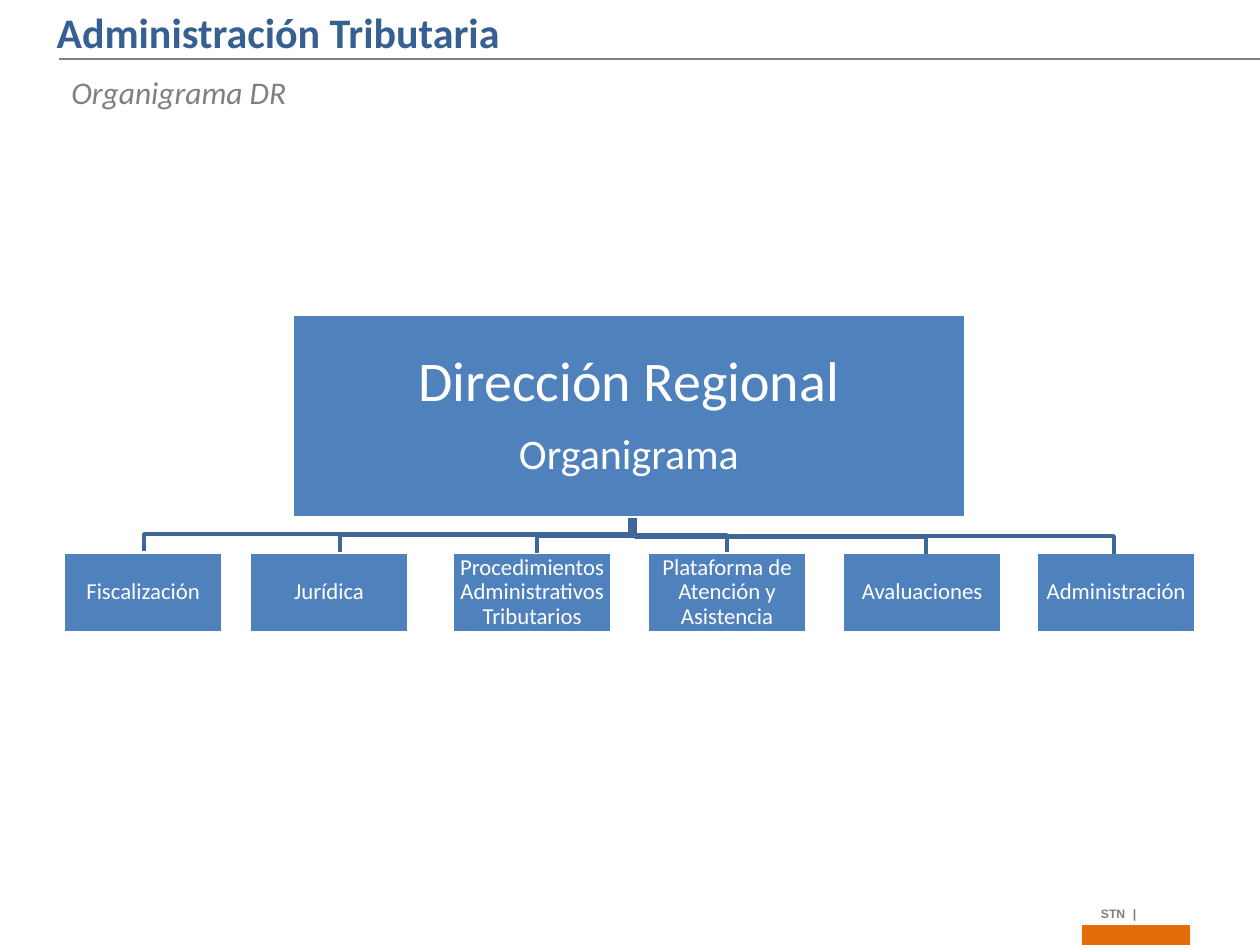
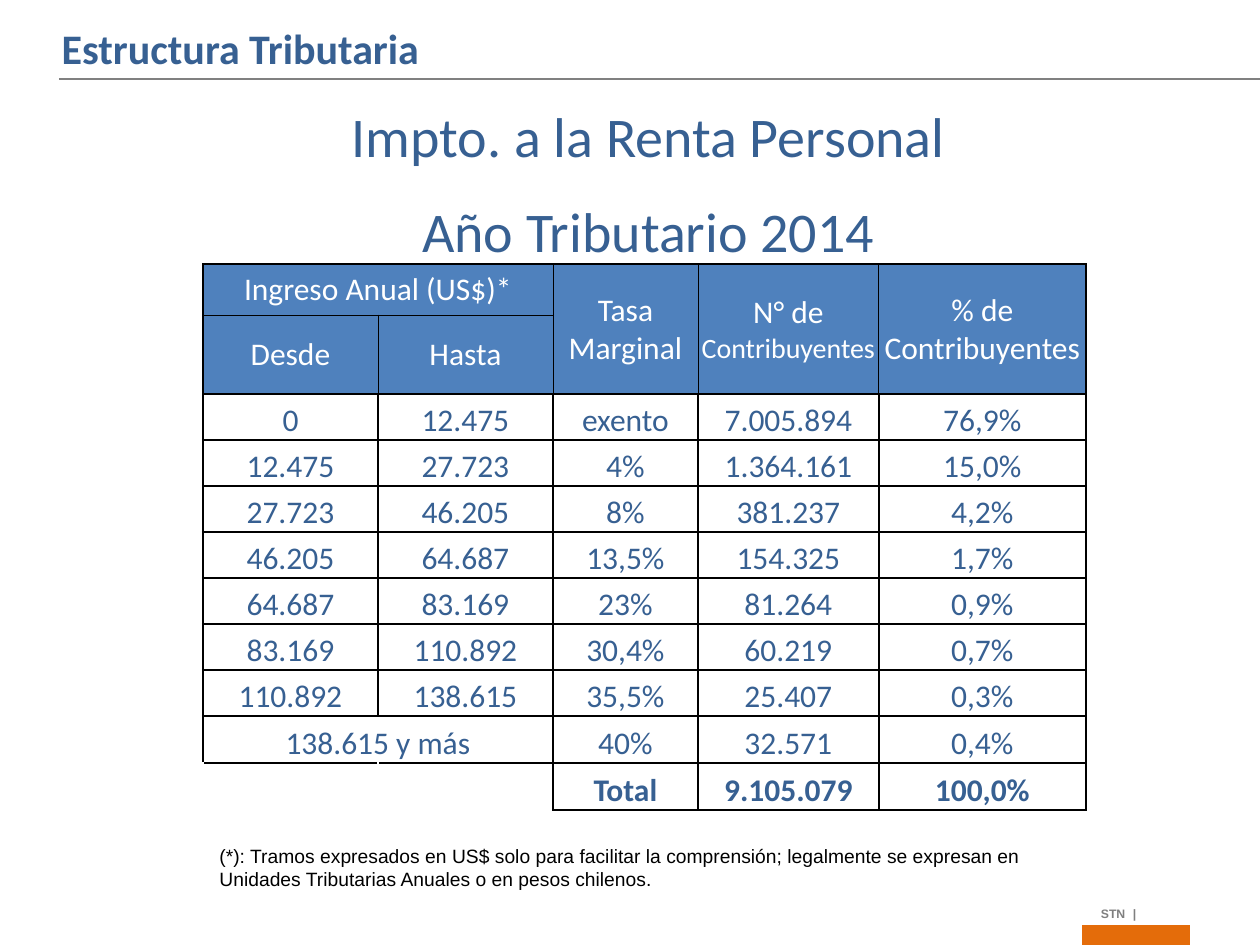
import pptx
import pptx.dml.color
import pptx.enum.shapes
import pptx.enum.text
import pptx.oxml
import pptx.oxml.ns
import pptx.util
from lxml import etree

RGBColor = pptx.dml.color.RGBColor
ALIGN = pptx.enum.text.PP_ALIGN
ANCHOR = pptx.enum.text.MSO_ANCHOR
RECTANGLE = pptx.enum.shapes.MSO_SHAPE.RECTANGLE
Pt = pptx.util.Pt
qn = pptx.oxml.ns.qn

# Shared style
SCALE = 914400 / 126  # EMU in one px
SLIDE_SIZE = (1260, 945)
NAVY = RGBColor(0x37, 0x60, 0x92)
BLUE = RGBColor(0x4F, 0x81, 0xBD)
BRANCH_BLUE = RGBColor(0x3F, 0x67, 0x97)
GRAY = RGBColor(0x80, 0x80, 0x80)
FOOTER_GRAY = RGBColor(0x7F, 0x7F, 0x7F)
ORANGE = RGBColor(0xE4, 0x6C, 0x0A)
WHITE = RGBColor(0xFF, 0xFF, 0xFF)
BLACK = RGBColor(0, 0, 0)
FOOTER_LABEL = "STN\t|"

# Organisation chart content
DIRECTION = ["Dirección Regional", "Organigrama"]
DIRECTION_BOX = (292, 314, 674, 204)
DEPARTMENT_TOP, DEPARTMENT_WIDTH, DEPARTMENT_HEIGHT = 552, 160, 81
DEPARTMENTS = [  # name, left
    ("Fiscalización", 63),
    ("Jurídica", 249),
    ("Procedimientos Administrativos Tributarios", 452),
    ("Plataforma de Atención y Asistencia", 647),
    ("Avaluaciones", 842),
    ("Administración", 1036),
]
BRANCHES = [  # start x, start y, end x, end y
    (630, 518, 144, 551),
    (635, 518, 1114, 554),
    (635, 519, 537, 553),
    (633, 518, 340, 552),
    (635, 520, 926, 554),
    (630, 518, 727, 552),
]

# Tax table content
TAX_HEADING = ["Impto. a la Renta Personal", "Año Tributario 2014"]
HEADER_ROWS = [
    ["Ingreso Anual (US$)*", "", "Tasa Marginal", "N° de\nContribuyentes", "% de Contribuyentes"],
    ["Desde", "Hasta", "", "", ""],
]
TAX_ROWS = [
    ["0", "12.475", "exento", "7.005.894", "76,9%"],
    ["12.475", "27.723", "4%", "1.364.161", "15,0%"],
    ["27.723", "46.205", "8%", "381.237", "4,2%"],
    ["46.205", "64.687", "13,5%", "154.325", "1,7%"],
    ["64.687", "83.169", "23%", "81.264", "0,9%"],
    ["83.169", "110.892", "30,4%", "60.219", "0,7%"],
    ["110.892", "138.615", "35,5%", "25.407", "0,3%"],
    ["138.615 y más", "", "40%", "32.571", "0,4%"],
    ["", "", "Total", "9.105.079", "100,0%"],
]
COLUMN_WIDTHS = [175, 175, 145, 181, 207]
ROW_HEIGHTS = [51, 79] + [46] * 7 + [47] * 2
MERGES = [((0, 0), (0, 1)), ((0, 2), (1, 2)), ((0, 3), (1, 3)), ((0, 4), (1, 4)), ((9, 0), (9, 1))]
TAX_NOTE = ("(*): Tramos expresados en US$ solo para facilitar la comprensión; "
            "legalmente se expresan en Unidades Tributarias Anuales o en pesos chilenos.")


def emu(px):
    return round(px * SCALE)


def write(text_frame, lines, size, color, font="Calibri", align=ALIGN.LEFT, bold=False, italic=False):
    text_frame.text = "\n".join(lines)
    for paragraph in text_frame.paragraphs:
        paragraph.alignment = align
        for run in paragraph.runs:
            run.font.name, run.font.size = font, Pt(size)
            run.font.bold, run.font.italic = bold, italic
            run.font.color.rgb = color


def add_text(slide, box, lines, size, color, wrap=True, anchor=ANCHOR.TOP, **style):
    shape = slide.shapes.add_textbox(*map(emu, box))
    shape.text_frame.word_wrap = wrap
    shape.text_frame.vertical_anchor = anchor
    write(shape.text_frame, lines, size, color, **style)
    return shape


def add_rectangle(slide, box, fill):
    shape = slide.shapes.add_shape(RECTANGLE, *map(emu, box))
    shape.shadow.inherit = False
    shape.fill.solid()
    shape.fill.fore_color.rgb = fill
    shape.line.fill.background()
    return shape


def add_footer(slide):
    add_rectangle(slide, (1082, 925, 108, 20), ORANGE)
    shape = add_text(slide, (1057, 900, 100, 28), [FOOTER_LABEL], 7, FOOTER_GRAY, font="Arial", bold=True)
    shape.text_frame.margin_left = emu(44)
    properties = shape.text_frame.paragraphs[0]._p.get_or_add_pPr()
    tabs = etree.SubElement(properties, qn("a:tabLst"))
    etree.SubElement(tabs, qn("a:tab"), pos=str(emu(32)), algn="l")


def add_base_slide(presentation, title, title_box, rule_y):
    slide = presentation.slides.add_slide(presentation.slide_layouts[5])
    shape = slide.shapes.title
    shape.left, shape.top, shape.width, shape.height = map(emu, title_box)
    frame = shape.text_frame
    frame.word_wrap = False
    frame.auto_size = pptx.enum.text.MSO_AUTO_SIZE.NONE
    frame.vertical_anchor = ANCHOR.TOP
    write(frame, [title], 24, NAVY, bold=True)

    rule = slide.shapes.add_connector(
        pptx.enum.shapes.MSO_CONNECTOR.STRAIGHT, emu(59), emu(rule_y), emu(SLIDE_SIZE[0]), emu(rule_y))
    rule.line.color.rgb = GRAY
    rule.line.width = Pt(0.75)
    etree.SubElement(rule._element.spPr, qn("a:effectLst"))
    add_footer(slide)
    return slide


def add_unit(slide, box, lines, sizes, margin):
    shape = add_rectangle(slide, box, BLUE)
    shape.line.color.rgb = WHITE
    shape.line.width = Pt(2)
    frame = shape.text_frame
    frame.word_wrap = True
    frame.vertical_anchor = ANCHOR.MIDDLE
    frame.margin_left = frame.margin_right = frame.margin_top = frame.margin_bottom = emu(margin)
    write(frame, lines, sizes[0], WHITE, align=ALIGN.CENTER)
    for paragraph, size in zip(frame.paragraphs, sizes):
        paragraph.line_spacing = 0.9
        paragraph.space_after = Pt(round(size * 0.35))
        paragraph.runs[0].font.size = Pt(size)


def add_branch(slide, start_x, start_y, end_x, end_y):
    middle_y = (start_y + end_y) / 2
    builder = slide.shapes.build_freeform(start_x, start_y, scale=SCALE)
    builder.add_line_segments([(start_x, middle_y), (end_x, middle_y), (end_x, end_y)], close=False)
    shape = builder.convert_to_shape()
    shape.shadow.inherit = False
    shape.fill.background()
    shape.line.color.rgb = BRANCH_BLUE
    shape.line.width = Pt(2)


def build_organisation(presentation):
    slide = add_base_slide(presentation, "Administración Tributaria", (44, 0, 490, 63), 59)
    add_text(slide, (59, 67, 249, 50), ["Organigrama DR"], 18, GRAY, wrap=False, italic=True)
    add_unit(slide, DIRECTION_BOX, DIRECTION, [32, 24], 3)
    for name, left in DEPARTMENTS:
        box = (left, DEPARTMENT_TOP, DEPARTMENT_WIDTH, DEPARTMENT_HEIGHT)
        add_unit(slide, box, [name], [13], 1)
    for branch in BRANCHES:
        add_branch(slide, *branch)


def border_widths(row, column):
    """Widths in points for each edge of a table cell."""
    last_column = column == len(COLUMN_WIDTHS) - 1
    if row < len(HEADER_ROWS):
        inner_bottom = row == 0 and column < 2
        return {"L": 0.5 if column else 1, "R": 1 if last_column else 0.5,
                "T": 0.5 if row else 1, "B": 0.5 if inner_bottom else 1}
    if row == len(ROW_HEIGHTS) - 1 and column < 2:
        return {"T": 1}
    return {"L": 1.5, "R": 1 if last_column else 1.5, "T": 1, "B": 1}


def set_borders(cell, widths):
    properties = cell._tc.get_or_add_tcPr()
    for index, (edge, width) in enumerate(widths.items()):
        line = etree.Element(qn("a:ln" + edge), w=str(Pt(width)))
        fill = etree.SubElement(line, qn("a:solidFill"))
        etree.SubElement(fill, qn("a:srgbClr"), val=str(BLACK))
        properties.insert(index, line)


def format_cell(cell, text, row, column):
    header = row < len(HEADER_ROWS)
    cell.margin_left = cell.margin_right = cell.margin_top = emu(1)
    cell.margin_bottom = 0
    cell.vertical_anchor = ANCHOR.MIDDLE if header else ANCHOR.BOTTOM
    if header:
        cell.fill.solid()
        cell.fill.fore_color.rgb = BLUE
    else:
        cell.fill.background()
    if cell.is_spanned:
        return
    write(cell.text_frame, text.split("\n"), 18, WHITE if header else NAVY,
          align=ALIGN.CENTER, bold=row == len(ROW_HEIGHTS) - 1)
    for paragraph in cell.text_frame.paragraphs[1:]:
        paragraph.runs[0].font.size = Pt(16)
    set_borders(cell, border_widths(row, column))


def build_tax_table(presentation):
    slide = add_base_slide(presentation, "Estructura Tributaria", (49, 16, 387, 63), 79)
    rows = HEADER_ROWS + TAX_ROWS
    box = (203, 264, sum(COLUMN_WIDTHS), sum(ROW_HEIGHTS))
    table = slide.shapes.add_table(len(rows), len(COLUMN_WIDTHS), *map(emu, box)).table
    table.first_row = table.horz_banding = False
    for column, width in zip(table.columns, COLUMN_WIDTHS):
        column.width = emu(width)
    for row, height in zip(table.rows, ROW_HEIGHTS):
        row.height = emu(height)
    for first, last in MERGES:
        table.cell(*first).merge(table.cell(*last))
    for row, texts in enumerate(rows):
        for column, text in enumerate(texts):
            format_cell(table.cell(row, column), text, row, column)

    heading = add_text(slide, (113, 135, 1071, 95), TAX_HEADING, 32, NAVY,
                       anchor=ANCHOR.MIDDLE, align=ALIGN.CENTER)
    heading.text_frame.paragraphs[1].space_before = Pt(16)
    add_text(slide, (207, 838, 849, 59), [TAX_NOTE], 11, BLACK, font="Arial")


def main():
    presentation = pptx.Presentation()
    presentation.slide_width, presentation.slide_height = map(emu, SLIDE_SIZE)
    build_organisation(presentation)
    build_tax_table(presentation)
    presentation.save("out.pptx")


if __name__ == "__main__":
    main()
